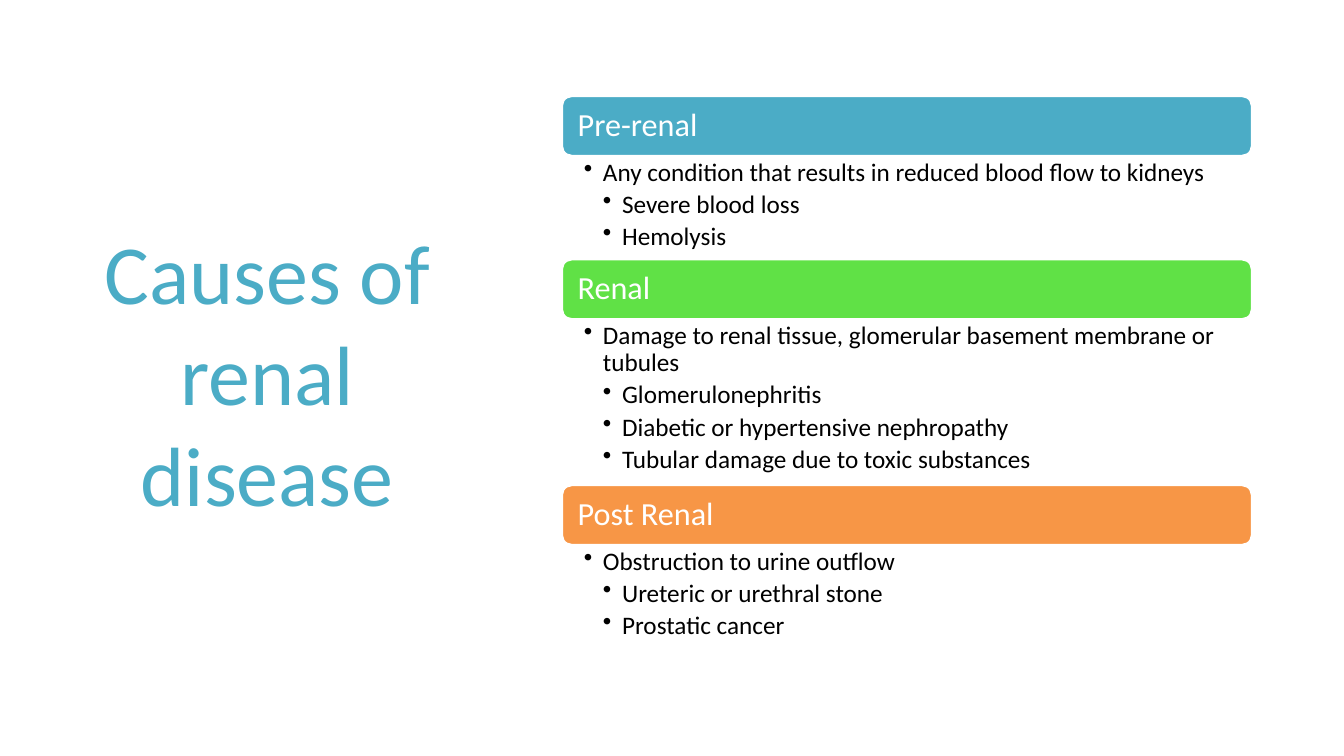
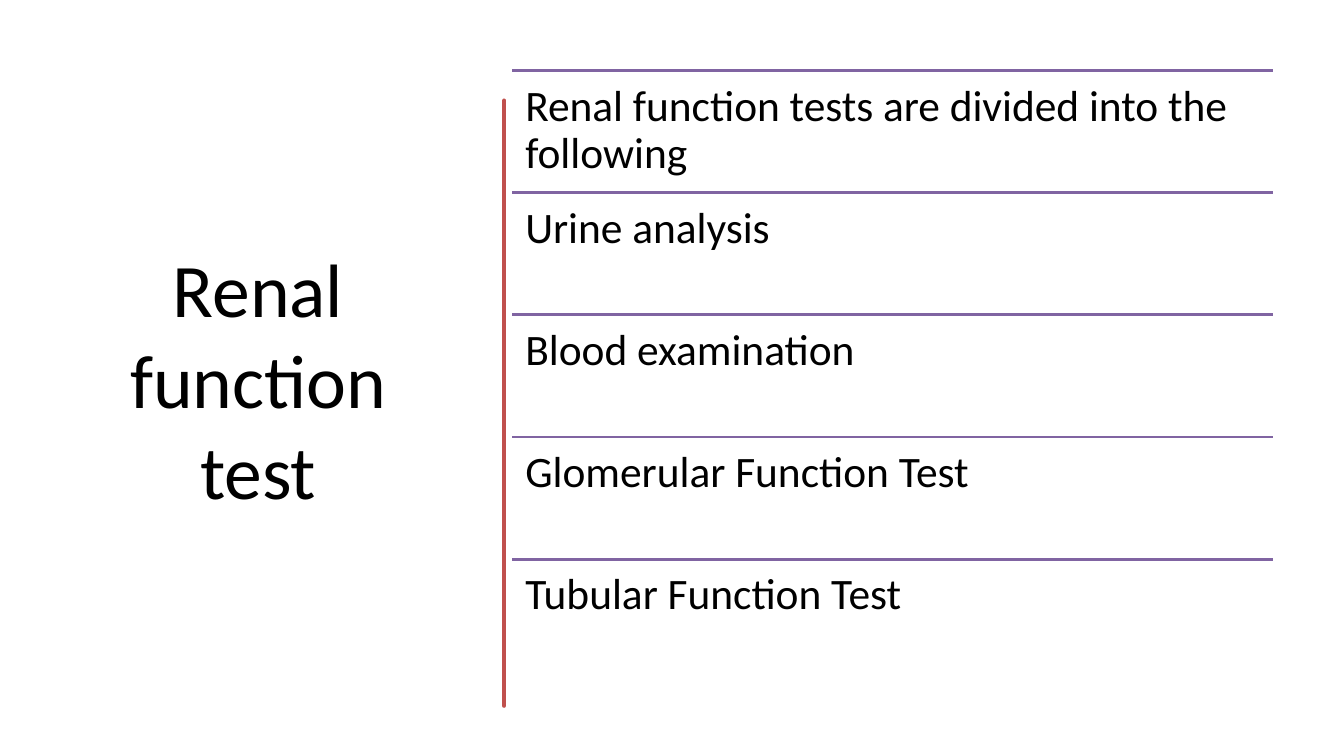
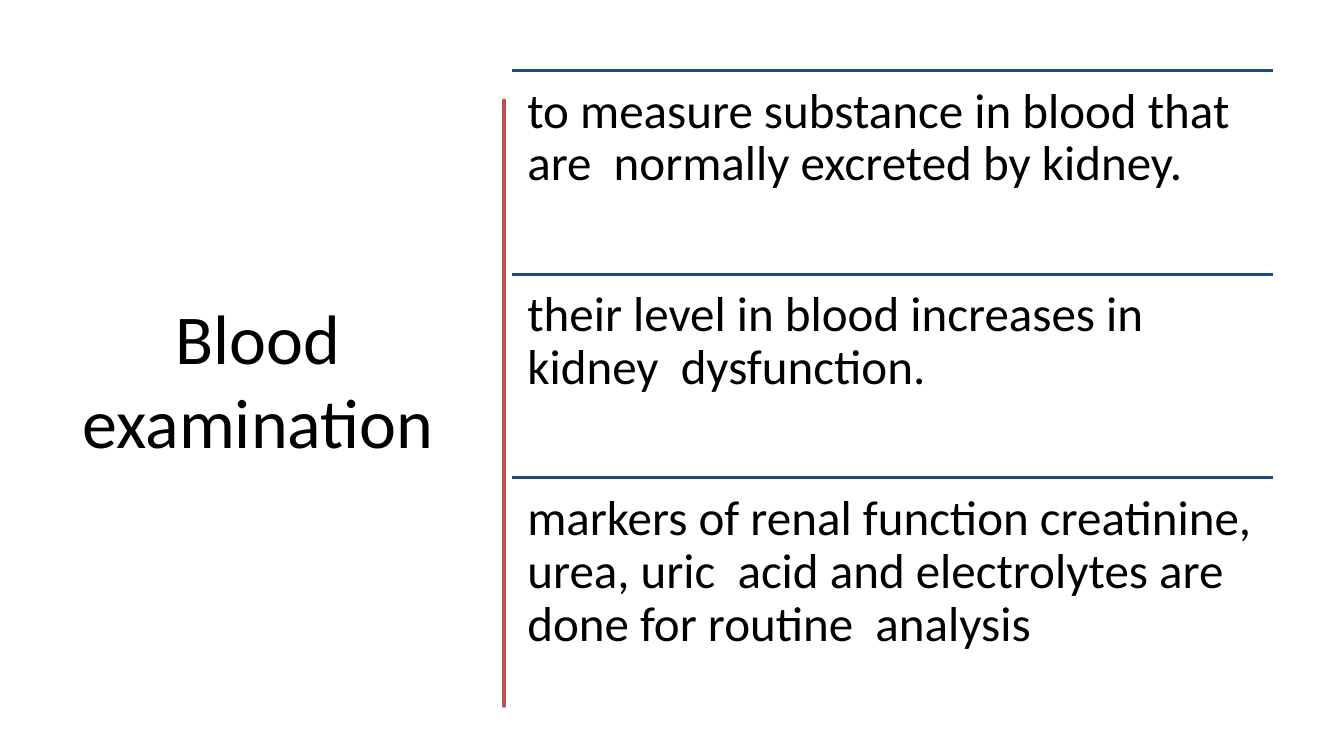
import pptx
import pptx.dml.color
import pptx.enum.shapes
import pptx.enum.text
import pptx.oxml.ns
import pptx.util
from lxml import etree

Inches = pptx.util.Inches
Pt = pptx.util.Pt

COLORS = {
    "black": "000000",
    "white": "FFFFFF",
    "teal": "4BACC6",
    "green": "60E146",
    "orange": "F79646",
    "red": "C0504D",
    "purple": "8064A2",
    "navy": "1F497D",
}

BRUSH_START = (4.75, 0.84)
BRUSH_CURVES = [
    (4.77, 1.02, 4.77, 1.19, 4.75, 1.46),
    (4.73, 1.73, 4.76, 1.95, 4.75, 2.26),
    (4.74, 2.57, 4.75, 2.62, 4.75, 2.94),
    (4.74, 3.25, 4.77, 3.42, 4.75, 3.56),
    (4.73, 3.7, 4.79, 4.14, 4.75, 4.36),
    (4.71, 4.57, 4.72, 4.84, 4.75, 5.1),
    (4.77, 5.36, 4.77, 5.64, 4.75, 5.84),
    (4.73, 6.03, 4.76, 6.5, 4.75, 6.76),
    (4.74, 6.76, 4.73, 6.76, 4.73, 6.76),
    (4.74, 6.46, 4.71, 6.44, 4.73, 6.13),
    (4.74, 5.83, 4.74, 5.7, 4.73, 5.57),
    (4.72, 5.44, 4.72, 4.95, 4.73, 4.77),
    (4.73, 4.59, 4.71, 4.45, 4.73, 4.15),
    (4.74, 3.86, 4.72, 3.73, 4.73, 3.35),
    (4.74, 2.98, 4.72, 2.81, 4.73, 2.5),
    (4.74, 2.18, 4.75, 2, 4.73, 1.81),
    (4.7, 1.63, 4.77, 1.04, 4.73, 0.84),
]


def curve_points(start, curves, steps=6):
    points = []
    x, y = start
    for x1, y1, x2, y2, x3, y3 in curves:
        for step in range(1, steps + 1):
            t = step / steps
            u = 1 - t
            weights = (u ** 3, 3 * u * u * t, 3 * u * t * t, t ** 3)
            points.append(tuple(
                sum(weight * value for weight, value in zip(weights, values))
                for values in ((x, x1, x2, x3), (y, y1, y2, y3))
            ))
        x, y = x3, y3
    return points


class Deck:
    font = "Calibri"
    line_spacing = 0.9
    indent = 0.19

    def __init__(self):
        self.presentation = pptx.Presentation()
        self.presentation.slide_width = Inches(13.33)
        self.presentation.slide_height = Inches(7.5)
        self.slide = None

    def color(self, name):
        return pptx.dml.color.RGBColor.from_string(COLORS[name])

    def style(self, paragraph, size, color):
        for run in paragraph.runs:
            run.font.name = self.font
            run.font.size = Pt(size)
            run.font.color.rgb = self.color(color)

    def frame(self, shape, insets, anchor):
        text_frame = shape.text_frame
        text_frame.word_wrap = True
        text_frame.auto_size = pptx.enum.text.MSO_AUTO_SIZE.NONE
        text_frame.vertical_anchor = anchor
        (text_frame.margin_left, text_frame.margin_top,
         text_frame.margin_right, text_frame.margin_bottom) = map(Inches, insets)
        return text_frame

    def add_slide(self, title, box, size, color="black"):
        layout = self.presentation.slide_layouts.get_by_name("Title Only")
        self.slide = self.presentation.slides.add_slide(layout)
        shape = self.slide.shapes.title
        shape.left, shape.top, shape.width, shape.height = map(Inches, box)
        text_frame = self.frame(shape, (0.1, 0.05, 0.1, 0.05),
                                pptx.enum.text.MSO_ANCHOR.MIDDLE)
        text_frame.text = title
        paragraph = text_frame.paragraphs[0]
        paragraph.alignment = pptx.enum.text.PP_ALIGN.CENTER
        self.style(paragraph, size, color)

    def heading(self, text, box, fill):
        shape = self.slide.shapes.add_shape(
            pptx.enum.shapes.MSO_SHAPE.ROUNDED_RECTANGLE, *map(Inches, box))
        shape.shadow.inherit = False
        shape.fill.solid()
        shape.fill.fore_color.rgb = self.color(fill)
        shape.line.color.rgb = self.color("white")
        shape.line.width = Pt(2)
        text_frame = self.frame(shape, (0.13, 0.1, 0.13, 0.1),
                                pptx.enum.text.MSO_ANCHOR.MIDDLE)
        text_frame.text = text
        paragraph = text_frame.paragraphs[0]
        paragraph.alignment = pptx.enum.text.PP_ALIGN.LEFT
        paragraph.line_spacing = self.line_spacing
        self.style(paragraph, 23, "white")

    def text(self, text, box, size, inset):
        shape = self.slide.shapes.add_textbox(*map(Inches, box))
        text_frame = self.frame(shape, (inset,) * 4, pptx.enum.text.MSO_ANCHOR.TOP)
        text_frame.text = text
        paragraph = text_frame.paragraphs[0]
        paragraph.line_spacing = self.line_spacing
        self.style(paragraph, size, "black")

    def bullets(self, items, box):
        shape = self.slide.shapes.add_textbox(*map(Inches, box))
        text_frame = self.frame(shape, (0.22, 0.03, 0.18, 0.03),
                                pptx.enum.text.MSO_ANCHOR.TOP)
        text_frame.text = "\n".join(items)
        for index, paragraph in enumerate(text_frame.paragraphs):
            level = 1 if index == 0 else 2
            properties = paragraph._p.get_or_add_pPr()
            properties.set("marL", str(Inches(self.indent * level)))
            properties.set("indent", str(-Inches(self.indent)))
            bullet = etree.SubElement(properties, pptx.oxml.ns.qn("a:buChar"))
            bullet.set("char", "•")
            paragraph.level = level
            paragraph.line_spacing = self.line_spacing
            paragraph.space_after = Pt(3.6)
            self.style(paragraph, 18, "black")

    def rule(self, left, top, width, color):
        connector = self.slide.shapes.add_connector(
            pptx.enum.shapes.MSO_CONNECTOR.STRAIGHT,
            Inches(left), Inches(top), Inches(left + width), Inches(top))
        connector.line.color.rgb = self.color(color)
        connector.line.width = Pt(2)
        etree.SubElement(connector._element.spPr, pptx.oxml.ns.qn("a:effectLst"))

    def brush_stroke(self):
        builder = self.slide.shapes.build_freeform(*BRUSH_START, scale=Inches(1))
        builder.add_line_segments(curve_points(BRUSH_START, BRUSH_CURVES), close=True)
        shape = builder.convert_to_shape()
        shape.shadow.inherit = False
        shape.fill.solid()
        shape.fill.fore_color.rgb = self.color("red")
        shape.line.color.rgb = self.color("red")
        shape.line.width = Pt(3.25)

    def causes_slide(self, title, sections):
        self.add_slide(title, (0.57, 0.68, 4.16, 6.02), 60, "teal")
        left, top, width, heading_height = 5.57, 0.95, 6.85, 0.6
        for heading, fill, list_height, items in sections:
            self.heading(heading, (left, top, width, heading_height), fill)
            top += heading_height
            self.bullets(items, (left, top, width, list_height))
            top += list_height

    def ruled_slide(self, title, title_size, items, size, inset, color):
        self.add_slide(title, (0.69, 0.7, 3.74, 6.11), title_size)
        self.brush_stroke()
        left, top, width = 5.08, 0.7, 7.55
        row_height = 6.06 / len(items)
        for index, item in enumerate(items):
            row_top = top + index * row_height
            self.rule(left, row_top, width, color)
            self.text(item, (left, row_top, width, row_height), size, inset)


def main():
    deck = Deck()
    deck.causes_slide("Causes of renal disease", [
        ("Pre-renal", "teal", 1.02, [
            "Any condition that results in reduced blood flow to kidneys",
            "Severe blood loss",
            "Hemolysis",
        ]),
        ("Renal", "green", 1.64, [
            "Damage to renal tissue, glomerular basement membrane or tubules",
            "Glomerulonephritis",
            "Diabetic or hypertensive nephropathy",
            "Tubular damage due to toxic substances",
        ]),
        ("Post Renal", "orange", 1.02, [
            "Obstruction to urine outflow",
            "Ureteric or urethral stone",
            "Prostatic cancer",
        ]),
    ])
    deck.ruled_slide("Renal function test", 54, [
        "Renal function tests are divided into the following",
        "Urine analysis",
        "Blood examination",
        "Glomerular Function Test",
        "Tubular Function Test",
    ], 31, 0.13, "purple")
    deck.ruled_slide("Blood examination", 50, [
        "to measure substance in blood that are  normally excreted by kidney.",
        "their level in blood increases in kidney  dysfunction.",
        "markers of renal function creatinine, urea, uric  acid and electrolytes "
        "are done for routine  analysis",
    ], 35, 0.15, "navy")
    deck.presentation.save("out.pptx")


if __name__ == "__main__":
    main()
